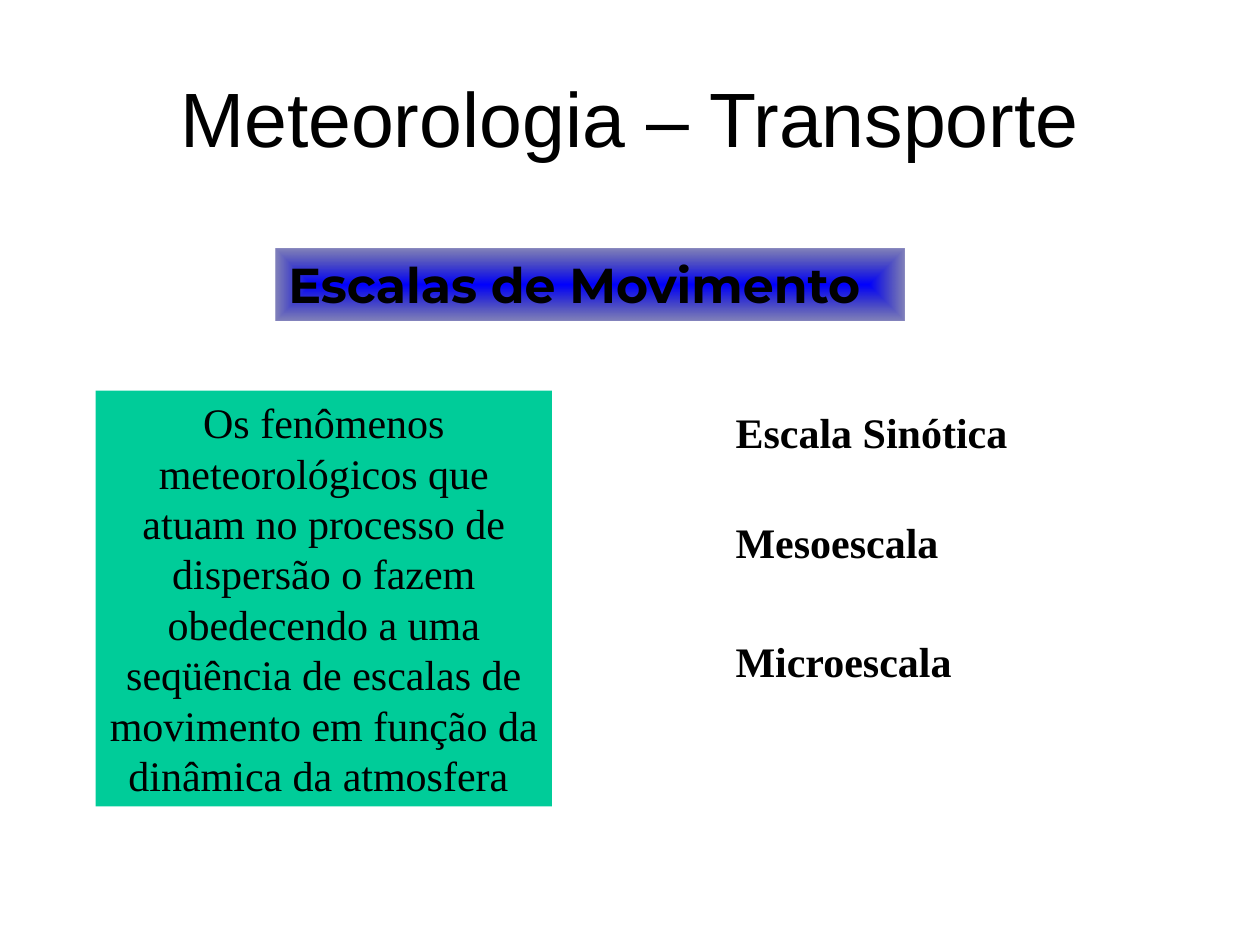
from lxml.etree import SubElement
from pptx import Presentation
from pptx.dml.color import RGBColor
from pptx.enum.shapes import MSO_SHAPE
from pptx.enum.text import MSO_ANCHOR, PP_ALIGN
from pptx.oxml.ns import qn
from pptx.util import Inches, Pt

# The slide is a grid of 100 columns and 75 rows
CELL = 0.1
COLUMNS, ROWS = 100, 75

SERIF = "Times New Roman"
SCALES_LEFT, SCALES_HEIGHT = 57.4, 5

# Name, top row and number of columns
SCALES = [
    ("Escala Sinótica", 31.8, 24.4),
    ("Mesoescala", 40.5, 18.6),
    ("Microescala", 49.9, 19.7),
]


def colour(hex_value):
    return RGBColor.from_string(hex_value)


def place(*cells):
    """Turn columns and rows of the grid into lengths."""
    return [Inches(cell * CELL) for cell in cells]


def write(holder, text, font, align=PP_ALIGN.LEFT, anchor=MSO_ANCHOR.MIDDLE,
          wrap=False):
    frame = holder.text_frame
    frame.word_wrap = wrap
    frame.vertical_anchor = anchor
    paragraph = frame.paragraphs[0]
    paragraph.text = text
    paragraph.alignment = align
    for name, value in font.items():
        setattr(paragraph.font, name, value)
    paragraph.font.color.rgb = colour("000000")


def add_label(slide, area, text, font, **layout):
    write(slide.shapes.add_textbox(*place(*area)), text, font, **layout)


def add_panel(slide, area, text, font, **layout):
    panel = slide.shapes.add_shape(MSO_SHAPE.RECTANGLE, *place(*area))
    panel.shadow.inherit = False
    panel.line.fill.background()
    write(panel, text, font, **layout)
    return panel


def fill_from_centre(panel, centre, edge, edge_alpha):
    """Gradient that runs from the middle out to the outline."""
    panel.fill.gradient()
    inner, outer = panel.fill.gradient_stops
    for stop, value, position in ((inner, centre, 0), (outer, edge, 1)):
        stop.color.rgb = colour(value)
        stop.position = position
    gradient = panel.fill._fill._gradFill
    outer_colour = gradient.findall(".//" + qn("a:srgbClr"))[-1]
    SubElement(outer_colour, qn("a:alpha"), val=str(edge_alpha * 1000))
    gradient.remove(gradient.find(qn("a:lin")))
    outline = SubElement(gradient, qn("a:path"), {"path": "shape"})
    SubElement(outline, qn("a:fillToRect"), {side: "50000" for side in "ltrb"})


def main():
    deck = Presentation()
    deck.slide_width, deck.slide_height = place(COLUMNS, ROWS)
    slide = deck.slides.add_slide(deck.slide_layouts[6])

    # Title
    add_label(slide, (5, 3, 90, 12.5), "Meteorologia – Transporte",
              {"name": "Arial", "size": Pt(44)},
              align=PP_ALIGN.CENTER, wrap=True)

    # Topic banner
    banner = add_panel(slide, (21.9, 19.7, 49.9, 5.7),
                       "Escalas de Movimento",
                       {"name": "Montserrat", "size": Pt(28), "bold": True},
                       align=PP_ALIGN.JUSTIFY)
    fill_from_centre(banner, "0000FF", "000075", 49)

    # Explanation
    explanation = add_panel(
        slide, (7.6, 31, 36.2, 33),
        "Os fenômenos meteorológicos que atuam no processo de dispersão "
        "o fazem obedecendo a uma seqüência de escalas de movimento "
        "em função da dinâmica da atmosfera ",
        {"name": SERIF, "size": Pt(24)}, align=PP_ALIGN.CENTER,
        anchor=MSO_ANCHOR.TOP, wrap=True)
    explanation.fill.solid()
    explanation.fill.fore_color.rgb = colour("00CC99")

    # Scales of movement
    for scale, top, width in SCALES:
        add_label(slide, (SCALES_LEFT, top, width, SCALES_HEIGHT), scale,
                  {"name": SERIF, "size": Pt(24), "bold": True})

    deck.save("out.pptx")


if __name__ == "__main__":
    main()
